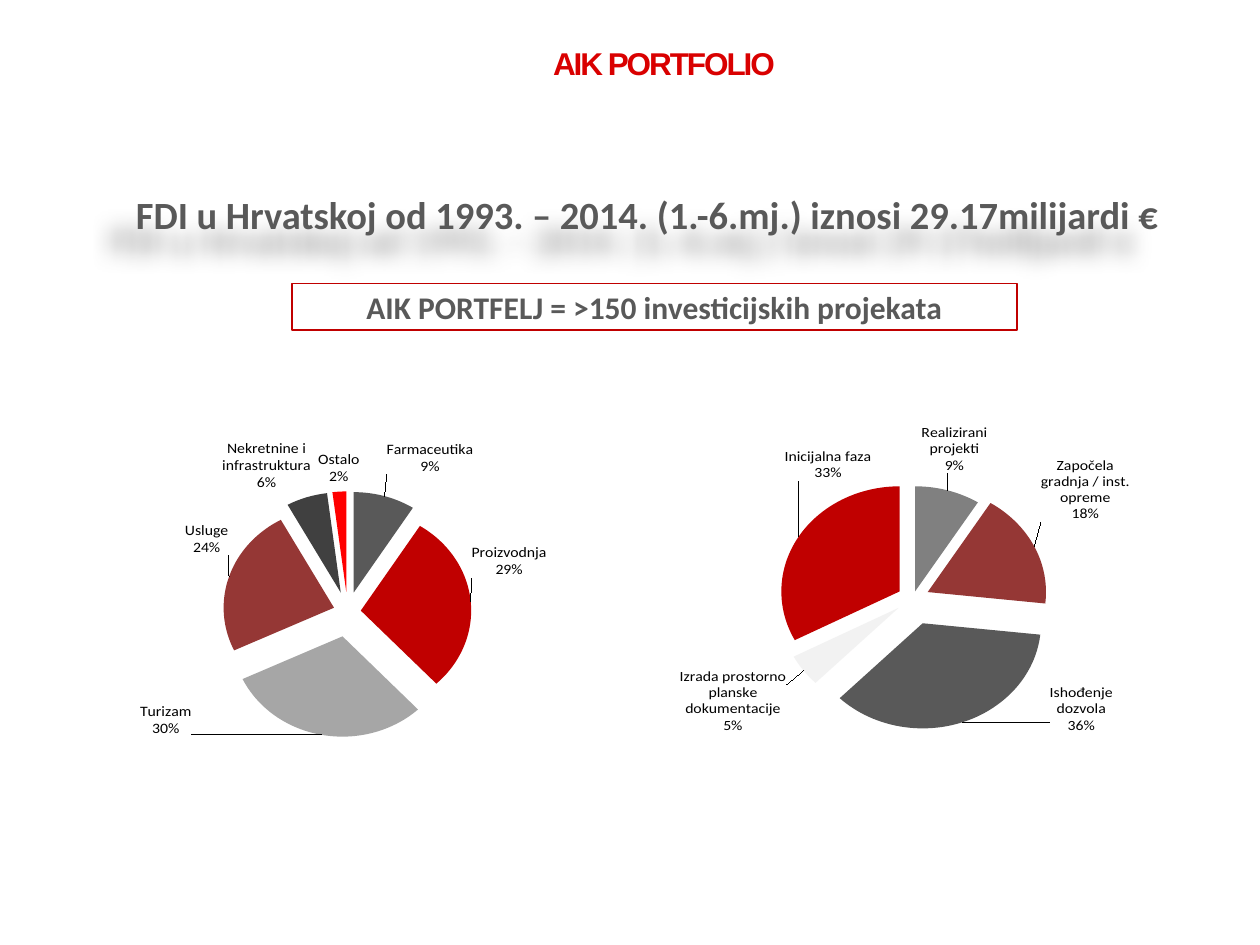
from lxml.etree import SubElement as Sub
from pptx import Presentation
from pptx.chart.data import CategoryChartData as Data
from pptx.dml.color import RGBColor as RGB
from pptx.enum.chart import XL_CHART_TYPE as Kind, XL_LABEL_POSITION as Pos
from pptx.enum.shapes import MSO_SHAPE as Form
from pptx.enum.text import PP_ALIGN as Align
from pptx.oxml import parse_xml
from pptx.oxml.ns import qn
from pptx.util import Pt

HUES = {
    "title": "D90000", "text": "595959", "red": "C00000", "pale": "A6A6A6",
    "brick": "953735", "dark": "404040", "vivid": "FF0000", "gray": "808080",
    "light": "F2F2F2", "black": "000000",
}
SECTORS = [
    ("Farmaceutika", 9, "text", 20, (0, -0.04)),
    ("Proizvodnja", 29, "red", 12, (-0.01, -0.06)),
    ("Turizam", 30, "pale", 25, (-0.2, -0.06)),
    ("Usluge", 24, "brick", 13, (0.01, -0.05)),
    ("Nekretnine i infrastruktura", 6, "dark", 20, (0.01, 0)),
    ("Ostalo", 2, "vivid", 20, (0, 0)),
]
PHASES = [
    ("Realizirani projekti", 9, "gray", 7, (-0.05, -0.03)),
    ("Započela gradnja / inst. opreme", 18, "brick", 14, (0, -0.06)),
    ("Ishođenje dozvola", 36, "text", 25, (0.15, -0.09)),
    ("Izrada prostorno planske dokumentacije", 5, "light", 15, (-0.02, 0.03)),
    ("Inicijalna faza", 33, "red", 13, (0.14, -0.15)),
]


def hue(key):
    return RGB.from_string(HUES[key])


def style(font, size, key, name="Calibri", bold=False):
    font.size, font.name, font.bold = Pt(size), name, bold
    font.color.rgb = hue(key)


def write(slide, box, text, size, key, name="Calibri"):
    shape = slide.shapes.add_textbox(*map(Pt, box))
    shape.text_frame.word_wrap = True
    para = shape.text_frame.paragraphs[0]
    para.text = text
    style(para.font, size, key, name, True)
    return shape, para


def add_title(slide, box):
    shape, para = write(slide, box, "AIK PORTFOLIO", 18, "title", "Arial")
    para.line_spacing = 0.8
    para.runs[0].font._element.set("spc", "-120")


def add_claim(slide, box):
    shape, para = write(
        slide, box,
        "FDI u Hrvatskoj od 1993. – 2014. (1.-6.mj.) iznosi 29.17milijardi €",
        22, "text")
    glow = Sub(shape._element.spPr, qn("a:effectLst"))
    cast = Sub(glow, qn("a:outerShdw"), blurRad=str(Pt(12)), dist=str(Pt(20)),
               dir="8280000", algn="tl", rotWithShape="0")
    tint = Sub(cast, qn("a:srgbClr"), val=HUES["black"])
    Sub(tint, qn("a:alpha"), val="40000")


def add_banner(slide, box):
    shape = slide.shapes.add_shape(Form.RECTANGLE, *map(Pt, box))
    shape.shadow.inherit = False
    shape.fill.background()
    shape.line.color.rgb = hue("red")
    shape.line.width = Pt(1)
    frame = shape.text_frame
    frame.word_wrap = True
    frame.margin_left = frame.margin_right = Pt(5)
    frame.margin_top = frame.margin_bottom = Pt(3)
    para = frame.paragraphs[0]
    para.text = "AIK PORTFELJ = >150 investicijskih projekata"
    para.alignment = Align.CENTER
    style(para.font, 18, "text", bold=True)


def layout(inner=False, **parts):
    node = parse_xml('<c:layout xmlns:c="http://schemas.openxmlformats.org/'
                     'drawingml/2006/chart"><c:manualLayout/></c:layout>')
    if inner:
        Sub(node[0], qn("c:layoutTarget"), val="inner")
        for mode in ("xMode", "yMode"):
            Sub(node[0], qn("c:" + mode), val="edge")
    for key, val in parts.items():
        Sub(node[0], qn("c:" + key), val=str(val))
    return node


def set_flags(node):
    for tag, on in (("showVal", 0), ("showCatName", 1), ("showPercent", 1)):
        node.find(qn("c:" + tag)).set("val", str(on))
    mark = node.makeelement(qn("c:separator"))
    mark.text = "\n"
    last = node.find(qn("c:showBubbleSize"))
    if last is None:
        last = node.find(qn("c:showPercent"))
    last.addnext(mark)


def burst(series, num, val):
    for item in series._element.findall(qn("c:dPt")):
        if item.find(qn("c:idx")).get("val") == str(num):
            for old in item.findall(qn("c:explosion")):
                item.remove(old)
            push = item.makeelement(qn("c:explosion"), val=str(val))
            item.find(qn("c:spPr")).addprevious(push)


def add_pie(slide, box, rows, area):
    data = Data()
    data.categories = [row[0] for row in rows]
    data.add_series("Series 1", [row[1] for row in rows])
    chart = slide.shapes.add_chart(Kind.PIE, *map(Pt, box), data).chart
    chart.has_legend = chart.has_title = False
    style(chart.font, 10, "black")
    plot = chart.plots[0]
    plot.vary_by_categories = True
    root = plot._element.getparent()
    for old in root.findall(qn("c:layout")):
        root.remove(old)
    root.insert(0, layout(True, **dict(zip("xywh", area))))
    series = plot.series[0]
    base = root.makeelement(qn("c:explosion"), val="25")
    series._element.find(qn("c:tx")).addnext(base)
    labels = series.data_labels
    style(labels.font, 9, "black")
    labels.position = Pos.OUTSIDE_END
    for num, (name, val, key, push, shift) in enumerate(rows):
        point = series.points[num]
        point.format.fill.solid()
        point.format.fill.fore_color.rgb = hue(key)
        burst(series, num, push)
        label = point.data_label
        label.position = Pos.OUTSIDE_END
        style(label.font, 9, "black")
    node = labels._element
    for item, row in zip(node.findall(qn("c:dLbl")), rows):
        set_flags(item)
        item.insert(1, layout(x=row[4][0], y=row[4][1]))
    set_flags(node)


def main():
    deck = Presentation()
    deck.slide_width, deck.slide_height = Pt(720), Pt(540)
    slide = deck.slides.add_slide(deck.slide_layouts[6])
    add_title(slide, (309, 26, 221, 24.5))
    add_pie(slide, (14.4, 207.4, 368.6, 235.4), SECTORS, (0, 0.33, 1, 0.67))
    add_pie(slide, (360, 218.9, 323.3, 225.4), PHASES, (0.1, 0.24, 0.8, 0.75))
    add_claim(slide, (70.6, 105.8, 669, 33.8))
    add_banner(slide, (167, 162, 414, 26.6))
    deck.save("out.pptx")


if __name__ == "__main__":
    main()
